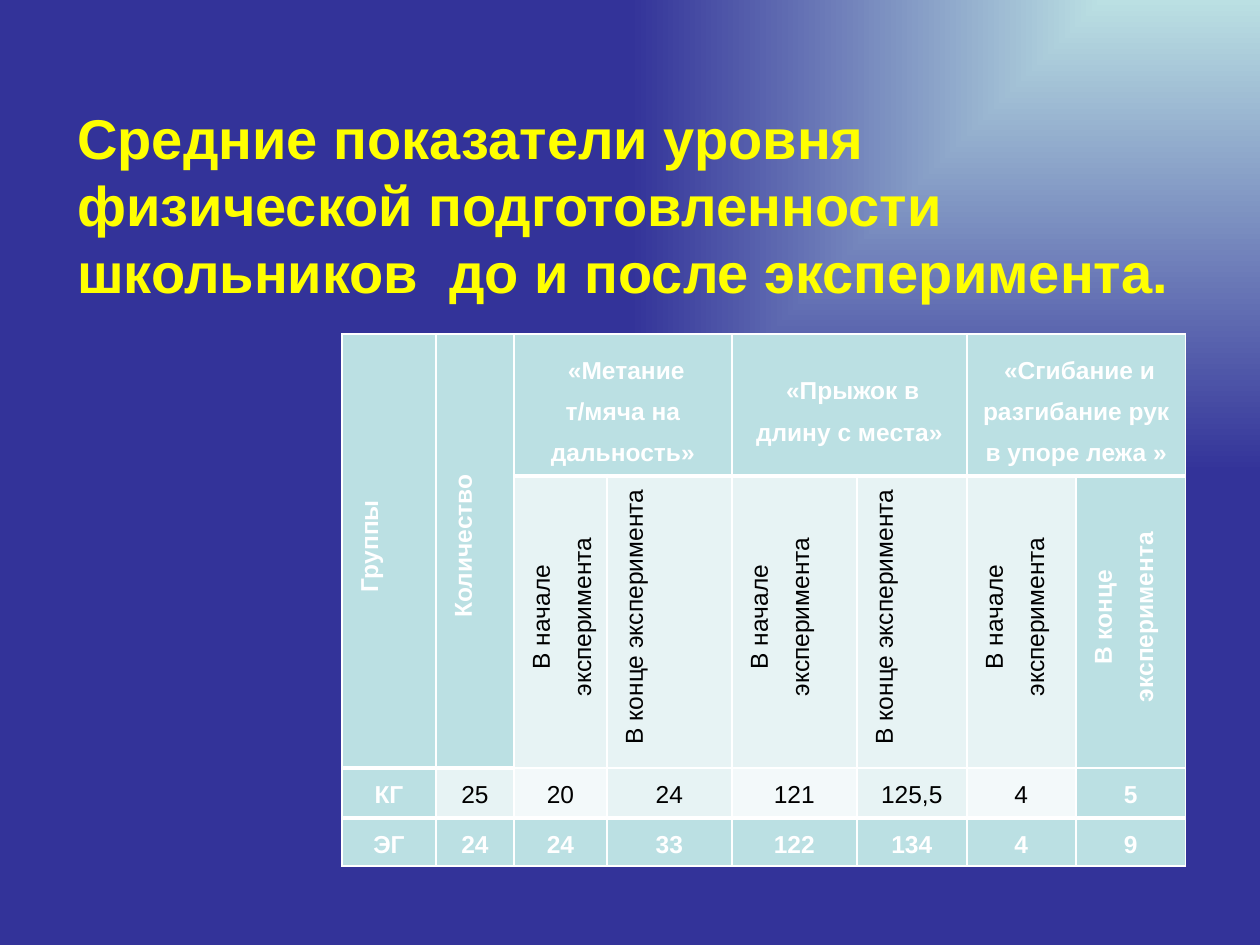
from dataclasses import dataclass

from lxml.etree import SubElement
from pptx import Presentation
from pptx.dml.color import RGBColor
from pptx.enum.text import MSO_ANCHOR as Anchor, PP_ALIGN as Align
from pptx.oxml.ns import qn
from pptx.util import Pt

TITLE = ("Средние показатели уровня физической подготовленности "
         "школьников  до и после эксперимента.")
START, END = "В начале эксперимента", "В конце эксперимента"
# None marks a cell covered by a merged neighbour.
ROWS = [
    ["Группы", "Количество", " «Метание т/мяча на дальность»", None,
     " «Прыжок в длину с места»", None,
     " «Сгибание и разгибание рук в упоре лежа »", None],
    [None, None, START, END, START, END, START, END],
    ["КГ", "25", "20", "24", "121", "125,5", "4", "5"],
    ["ЭГ", "24", "24", "33", "122", "134", "4", "9"],
]
MERGES = [((0, 0), (1, 0)), ((0, 1), (1, 1)),
          ((0, 2), (0, 3)), ((0, 4), (0, 5)), ((0, 6), (0, 7))]
COLUMN_WIDTHS = [94, 78, 93, 125, 125, 110, 109, 110]
ROW_HEIGHTS = [142, 292, 50, 48]
TABLE_LEFT, TABLE_TOP = 342, 334
TITLE_BOX = (65, 125, 1134, 158)
CELL_INSET, VERTICAL_INDENT = 9, 10
LAST_ROW, LAST_COLUMN = len(ROWS) - 1, len(COLUMN_WIDTHS) - 1


@dataclass(frozen=True)
class Theme:
    font: str = "Arial"
    navy: str = "333399"
    aqua: str = "BBE0E3"
    pale: str = "E7F3F4"
    paler: str = "F3F9FA"
    white: str = "FFFFFF"
    black: str = "000000"
    yellow: str = "FFFF00"
    title_size: int = 32
    table_size: int = 14
    thin: int = 1
    thick: int = 3


THEME = Theme()


def px(length):
    return round(length * 914400 / 126)


def write_text(frame, text, *, size, color, bold, align=Align.LEFT,
               line_spacing=None, space_after=None, indent=0):
    para = frame.paragraphs[0]
    para.alignment = align
    para.line_spacing = line_spacing
    if space_after is not None:
        para.space_after = Pt(space_after)
    if indent:
        para._p.get_or_add_pPr().set("marL", str(px(indent)))
    span = para.add_run()
    span.text = text
    span.font.name = THEME.font
    span.font.size = Pt(size)
    span.font.bold = bold
    span.font.color.rgb = RGBColor.from_string(color)


def paint_background(page):
    """Gradient spreading from the top right corner."""
    fill = page.background.fill
    fill.gradient()
    for stop, color in zip(fill.gradient_stops, (THEME.aqua, THEME.navy)):
        stop.color.rgb = RGBColor.from_string(color)
    gradient = next(page.element.iter(qn("a:gradFill")))
    gradient.remove(gradient.find(qn("a:lin")))
    shade = SubElement(gradient, qn("a:path"), {"path": "rect"})
    SubElement(shade, qn("a:fillToRect"), l="100000", b="100000")


def add_title(page):
    box = page.shapes.add_textbox(*map(px, TITLE_BOX))
    box.text_frame.word_wrap = True
    box.text_frame.vertical_anchor = Anchor.MIDDLE
    write_text(box.text_frame, TITLE, size=THEME.title_size,
               color=THEME.yellow, bold=True)


def is_thick(edge, column):
    """Tell whether the rule above row number `edge` is heavy."""
    return edge in (1, LAST_ROW) or (edge == 2 and column < 2)


def set_borders(cell, row, column):
    widths = {"L": THEME.thin, "R": THEME.thin}
    for side, edge in (("T", row), ("B", row + 1)):
        widths[side] = THEME.thick if is_thick(edge, column) else THEME.thin
    properties = cell._tc.get_or_add_tcPr()
    for side, width in widths.items():
        line = SubElement(properties, qn(f"a:ln{side}"), w=str(Pt(width)))
        solid = SubElement(line, qn("a:solidFill"))
        SubElement(solid, qn("a:srgbClr"), val=THEME.white)


def cell_fill(row, column):
    if row in (0, LAST_ROW) or column in (0, LAST_COLUMN):
        return THEME.aqua
    if row == 1 or column % 2:
        return THEME.pale
    return THEME.paler


def format_cell(cell, row, column, text):
    set_borders(cell, row, column)
    fill = cell_fill(row, column)
    cell.fill.solid()
    cell.fill.fore_color.rgb = RGBColor.from_string(fill)
    cell.margin_left = cell.margin_right = px(CELL_INSET)
    cell.margin_top = cell.margin_bottom = 0
    if text is None:
        return
    vertical = row == 1 or (row == 0 and column < 2)
    if vertical:
        cell._tc.get_or_add_tcPr().set("vert", "vert270")
    if row < 2 <= column:
        cell.vertical_anchor = Anchor.MIDDLE
    strong = fill == THEME.aqua
    write_text(cell.text_frame, text, size=THEME.table_size, bold=strong,
               color=THEME.white if strong else THEME.black,
               align=Align.CENTER, line_spacing=1.5, space_after=10,
               indent=VERTICAL_INDENT if vertical else 0)


def add_results_table(page):
    table = page.shapes.add_table(
        len(ROWS), len(COLUMN_WIDTHS), px(TABLE_LEFT), px(TABLE_TOP),
        px(sum(COLUMN_WIDTHS)), px(sum(ROW_HEIGHTS))).table
    table.first_row = table.horz_banding = False
    for column, width in zip(table.columns, COLUMN_WIDTHS):
        column.width = px(width)
    for row, height in zip(table.rows, ROW_HEIGHTS):
        row.height = px(height)
    for first, last in MERGES:
        table.cell(*first).merge(table.cell(*last))
    for row, texts in enumerate(ROWS):
        for column, text in enumerate(texts):
            format_cell(table.cell(row, column), row, column, text)


def main():
    deck = Presentation()
    deck.slide_width, deck.slide_height = px(1260), px(945)
    page = deck.slides.add_slide(deck.slide_layouts[6])
    paint_background(page)
    add_title(page)
    add_results_table(page)
    deck.save("out.pptx")


if __name__ == "__main__":
    main()
